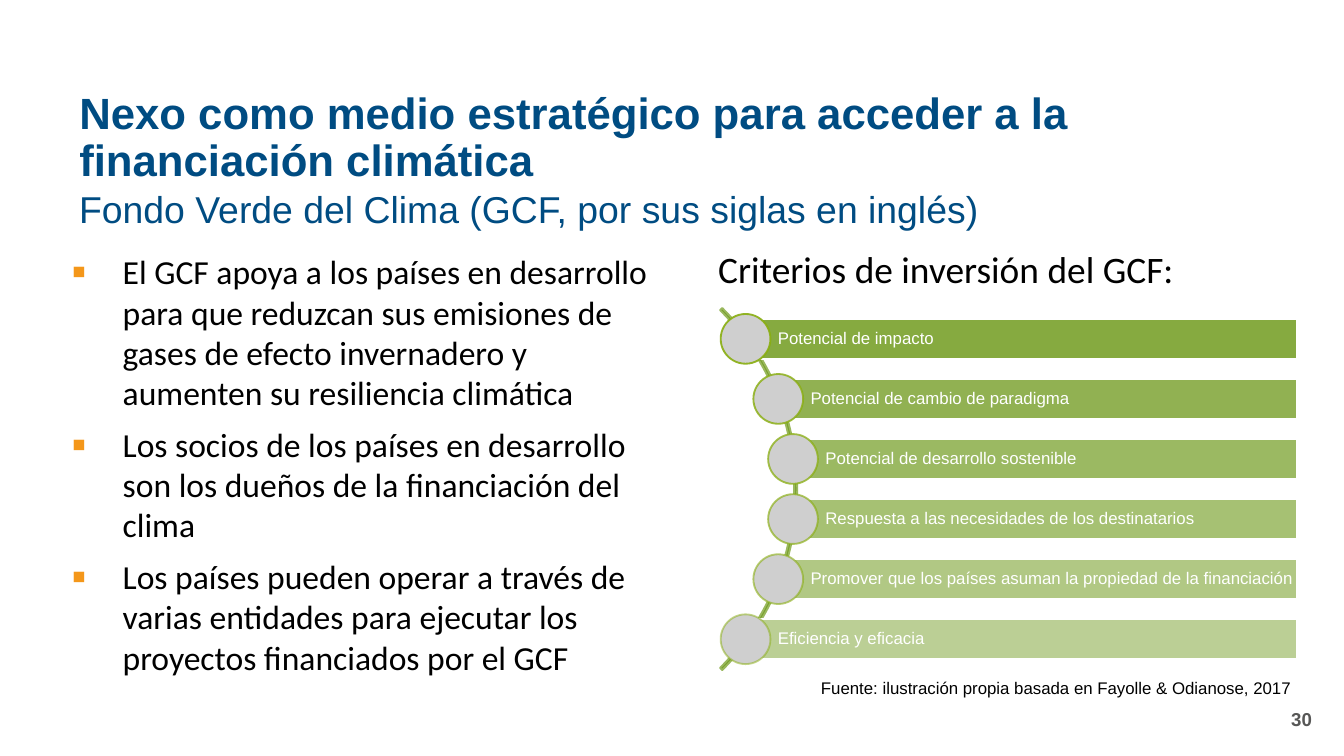
"""Build the slide on the Green Climate Fund and its investment criteria."""
from math import sqrt

from lxml.etree import SubElement
from pptx import Presentation
from pptx.dml.color import RGBColor as RGB
from pptx.enum.shapes import MSO_SHAPE as SHAPE
from pptx.enum.text import MSO_ANCHOR as ANCHOR, MSO_AUTO_SIZE as AUTO, PP_ALIGN as ALIGN
from pptx.oxml.ns import qn
from pptx.util import Inches, Pt

C = {"blue": "004C82", "orange": "F4971A", "black": "000000", "grey": "575756",
     "green": "79A12C", "arc": "9AB85E", "ring": "89AE10", "disc": "CFCFCF", "white": "FFFFFF"}

prs = Presentation()
prs.slide_width, prs.slide_height = Inches(10), Inches(10) * 9 // 16
COL, ROW = prs.slide_width / 100, prs.slide_height / 56.25
s = prs.slides.add_slide(prs.slide_layouts[5])


def write(sp, lines, size, color, name="Arial", bold=False, bullet=None,
          ins=(1, 0.5, 1, 0.5), anchor=ANCHOR.TOP, **para):
    tf = sp.text_frame
    left, top, right, bottom = ins
    frame = {"word_wrap": True, "auto_size": AUTO.NONE, "vertical_anchor": anchor,
             "margin_left": int(left * COL), "margin_top": int(top * ROW),
             "margin_right": int(right * COL), "margin_bottom": int(bottom * ROW)}
    for key, value in frame.items():
        setattr(tf, key, value)
    for i, line in enumerate(lines):
        p = tf.add_paragraph() if i else tf.paragraphs[0]
        for key, value in ({"alignment": ALIGN.LEFT} | para).items():
            setattr(p, key, value)
        p.space_before = Pt(6 if i else 0)
        if bullet:
            pPr = p._p.get_or_add_pPr()
            pPr.set("marL", str(int(6.7 * COL)))
            pPr.set("indent", str(int(-3.8 * COL)))
            SubElement(SubElement(pPr, qn("a:buClr")), qn("a:srgbClr"), val=C["orange"])
            SubElement(pPr, qn("a:buSzPct"), val="125000")
            SubElement(pPr, qn("a:buFont"), typeface="Arial")
            SubElement(pPr, qn("a:buChar"), char=bullet)
        r = p.add_run()
        r.text = line
        for key, value in {"size": Pt(size), "name": name, "bold": bold}.items():
            setattr(r.font, key, value)
        r.font.color.rgb = RGB.from_string(C[color])


def draw(kind, x, y, w, h, fill, line, fill_alpha=100, line_alpha=100):
    sp = s.shapes.add_shape(kind, int(x * COL), int(y * ROW), int(w * COL), int(h * ROW))
    sp.shadow.inherit = False
    sp.line.width = Pt(1)
    spPr = sp._element.spPr
    for part, parent, color, alpha in ((sp.fill, spPr, fill, fill_alpha),
                                       (sp.line.fill, spPr.find(qn("a:ln")), line, line_alpha)):
        part.solid()
        part.fore_color.rgb = RGB.from_string(C[color])
        if alpha < 100:
            clr = parent.find(qn("a:solidFill")).find(qn("a:srgbClr"))
            SubElement(clr, qn("a:alpha"), val=str(alpha * 1000))
    return sp


title = s.shapes.title
for key, value in {"left": 4.9 * COL, "top": 7.4 * ROW, "width": 93.7 * COL, "height": 5.9 * ROW}.items():
    setattr(title, key, int(value))
write(title, ["Nexo como medio estratégico para acceder a la financiación climática"],
      23.4, "blue", bold=True, anchor=ANCHOR.MIDDLE, line_spacing=0.9)

texts = [
    ((4.9, 14.2, 93.7, 3), ["Fondo Verde del Clima (GCF, por sus siglas en inglés)"],
     {"size": 20, "color": "blue", "ins": (1, 0, 0.8, 0), "line_spacing": 0.9}),
    ((1.45, 18.2, 49.3, 36.8),
     ["El GCF apoya a los países en desarrollo para que reduzcan sus emisiones de gases de efecto "
      "invernadero y aumenten su resiliencia climática",
      "Los socios de los países en desarrollo son los dueños de la financiación del clima",
      "Los países pueden operar a través de varias entidades para ejecutar los proyectos "
      "financiados por el GCF"],
     {"size": 18, "color": "black", "name": "Calibri", "bullet": "▪"}),
    ((52.45, 18.2, 45.1, 37.9), ["Criterios de inversión del GCF:"],
     {"size": 20, "color": "black", "name": "Calibri", "line_spacing": 0.9}),
    ((60.1, 49.9, 38.5, 2.5), ["Fuente: ilustración propia basada en Fayolle & Odianose, 2017"],
     {"size": 9, "color": "black"}),
    ((76.1, 52, 22.5, 3), ["30"],
     {"size": 10, "color": "grey", "bold": True, "anchor": ANCHOR.MIDDLE, "alignment": ALIGN.RIGHT}),
]
for (x, y, w, h), lines, style in texts:
    sp = s.shapes.add_textbox(int(x * COL), int(y * ROW), int(w * COL), int(h * ROW))
    write(sp, lines, **style)

ARC_X, ARC_Y, ARC_SIZE = 21.22, 17.34, 38.1
arc = draw(SHAPE.BLOCK_ARC, ARC_X, ARC_Y, ARC_SIZE, ARC_SIZE, "green", "arc")
for i, value in enumerate((189, 27, 0.006)):
    arc.adjustments[i] = value

criteria = ["Potencial de impacto", "Potencial de cambio de paradigma",
            "Potencial de desarrollo sostenible", "Respuesta a las necesidades de los destinatarios",
            "Promover que los países asuman la propiedad de la financiación", "Eficiencia y eficacia"]
PITCH, BAR, DISC, RIGHT, RADIUS = 4.47, 3, 3.7, 96.5, 18.87
for i, label in enumerate(criteria):
    dy = (i - (len(criteria) - 1) / 2) * PITCH
    x = ARC_X + ARC_SIZE / 2 + sqrt(RADIUS ** 2 - dy ** 2)
    y = ARC_Y + ARC_SIZE / 2 + dy
    alpha = 90 - 8 * i
    bar = draw(SHAPE.RECTANGLE, x, y - BAR / 2, RIGHT - x, BAR, "green", "white", fill_alpha=alpha)
    write(bar, [label], 9, "white", ins=(2.4, 0.3, 0.3, 0.3), anchor=ANCHOR.MIDDLE, line_spacing=0.9)
    draw(SHAPE.OVAL, x - DISC / 2, y - DISC / 2, DISC, DISC, "disc", "ring", line_alpha=alpha)

prs.save("out.pptx")
